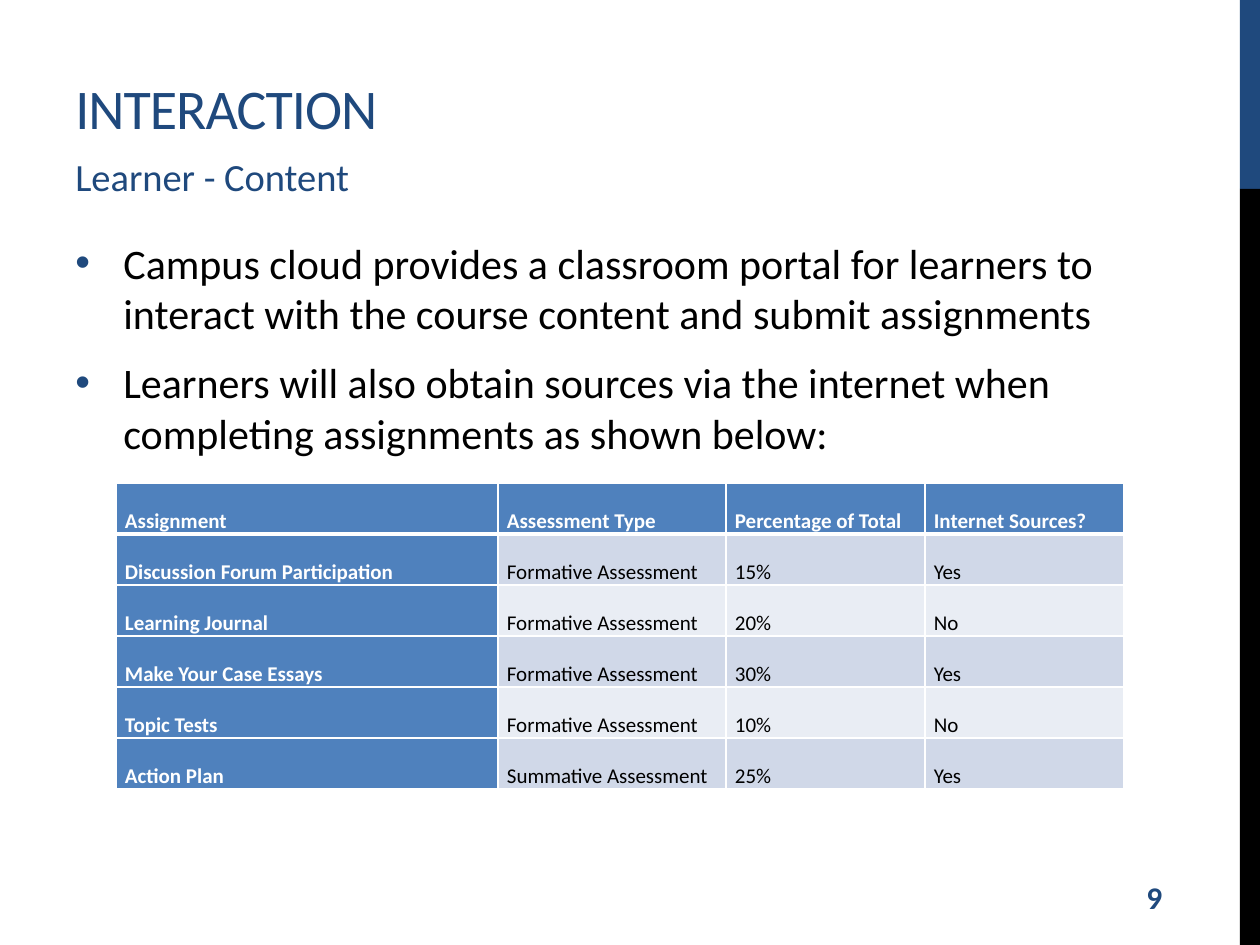
import pptx
import pptx.dml.color
import pptx.enum.shapes
import pptx.enum.text
import pptx.oxml
import pptx.oxml.ns
import pptx.util

PX = 914400 // 126
COLORS = {
    "navy": "1F497D",
    "black": "000000",
    "white": "FFFFFF",
    "blue": "4F81BD",
    "band_dark": "D0D8E8",
    "band_light": "E9EDF4",
}
NAMESPACE = pptx.oxml.ns.nsdecls("a")
ANCHOR = pptx.enum.text.MSO_ANCHOR


def rgb(name):
    return pptx.dml.color.RGBColor.from_string(COLORS[name])


def add_run(paragraph, text, size, color, bold=False):
    run = paragraph.add_run()
    run.text = text
    run.font.name = "Calibri"
    run.font.size = pptx.util.Pt(size)
    run.font.bold = bold
    run.font.color.rgb = rgb(color)
    return run


presentation = pptx.Presentation()
presentation.slide_width = 1260 * PX
presentation.slide_height = 945 * PX
slide = presentation.slides.add_slide(presentation.slide_layouts[6])

# Side bar
for top, height, color in [(0, 189, "navy"), (189, 756, "black")]:
    bar = slide.shapes.add_shape(
        pptx.enum.shapes.MSO_SHAPE.RECTANGLE, 1240 * PX, top * PX, 20 * PX, height * PX)
    bar.shadow.inherit = False
    bar.fill.solid()
    bar.fill.fore_color.rgb = rgb(color)
    bar.line.fill.background()

# Title, subtitle, bullets and page number
bullets = [
    "Campus cloud provides a classroom portal for learners to interact with "
    "the course content and submit assignments",
    "Learners will also obtain sources via the internet when completing "
    "assignments as shown below:",
]
text_blocks = [
    ("title", (63, 21, 1061, 126), ANCHOR.BOTTOM, ["INTERACTION"], 32, "navy"),
    ("subtitle", (63, 147, 1061, 53), ANCHOR.TOP, ["Learner - Content"], 22, "navy"),
    ("bullets", (63, 231, 1061, 614), ANCHOR.TOP, bullets, 24, "black"),
    ("number", (1134, 872, 87, 50), ANCHOR.MIDDLE, ["9"], 18, "navy"),
]
for role, box, anchor, texts, size, color in text_blocks:
    shape = slide.shapes.add_textbox(*[length * PX for length in box])
    frame = shape.text_frame
    frame.word_wrap = True
    frame.vertical_anchor = anchor
    for index, text in enumerate(texts):
        paragraph = frame.paragraphs[0] if index == 0 else frame.add_paragraph()
        run = add_run(paragraph, text, size, color, bold=role == "number")
        if role == "title":
            run.font._element.set("spc", "-60")
        if role in ("subtitle", "bullets"):
            paragraph.space_before = pptx.util.Pt(size * 0.2)
            paragraph.space_after = pptx.util.Pt(6)
        if role == "bullets":
            properties = paragraph._p.get_or_add_pPr()
            properties.set("marL", str(48 * PX))
            properties.set("indent", str(-48 * PX))
            for xml in (
                f'<a:buClr {NAMESPACE}><a:srgbClr val="{COLORS["navy"]}"/></a:buClr>',
                f'<a:buFont {NAMESPACE} typeface="Arial"/>',
                f'<a:buChar {NAMESPACE} char="•"/>',
            ):
                properties.append(pptx.oxml.parse_xml(xml))

# Assignment table
rows = [
    ("Assignment", "Assessment Type", "Percentage of Total", "Internet Sources?"),
    ("Discussion Forum Participation", "Formative Assessment", "15%", "Yes"),
    ("Learning Journal", "Formative Assessment", "20%", "No"),
    ("Make Your Case Essays", "Formative Assessment", "30%", "Yes"),
    ("Topic Tests", "Formative Assessment", "10%", "No"),
    ("Action Plan", "Summative Assessment", "25%", "Yes"),
]
column_widths = [382, 228, 199, 199]
row_height = 51
table = slide.shapes.add_table(
    len(rows), len(column_widths), 116 * PX, 483 * PX,
    sum(column_widths) * PX, len(rows) * row_height * PX).table
for column, width in zip(table.columns, column_widths):
    column.width = width * PX

for row_index, values in enumerate(rows):
    table.rows[row_index].height = row_height * PX
    for column_index, value in enumerate(values):
        cell = table.cell(row_index, column_index)
        cell.margin_left = cell.margin_right = 9 * PX
        cell.margin_top = cell.margin_bottom = 0
        is_header = row_index == 0 or column_index == 0
        band = "band_dark" if row_index % 2 else "band_light"
        cell.fill.solid()
        cell.fill.fore_color.rgb = rgb("blue" if is_header else band)

        paragraph = cell.text_frame.paragraphs[0]
        paragraph.line_spacing = 2.0
        add_run(paragraph, value, 12, "white" if is_header else "black", is_header)

        # Borders come before the fill; the header row is set off by a thicker line
        thick_side = {0: "lnB", 1: "lnT"}.get(row_index)
        for position, side in enumerate(("lnL", "lnR", "lnT", "lnB")):
            width = pptx.util.Pt(3 if side == thick_side else 1)
            cell._tc.get_or_add_tcPr().insert(position, pptx.oxml.parse_xml(
                f'<a:{side} {NAMESPACE} w="{width}"><a:solidFill>'
                f'<a:srgbClr val="{COLORS["white"]}"/></a:solidFill></a:{side}>'))

presentation.save("out.pptx")
